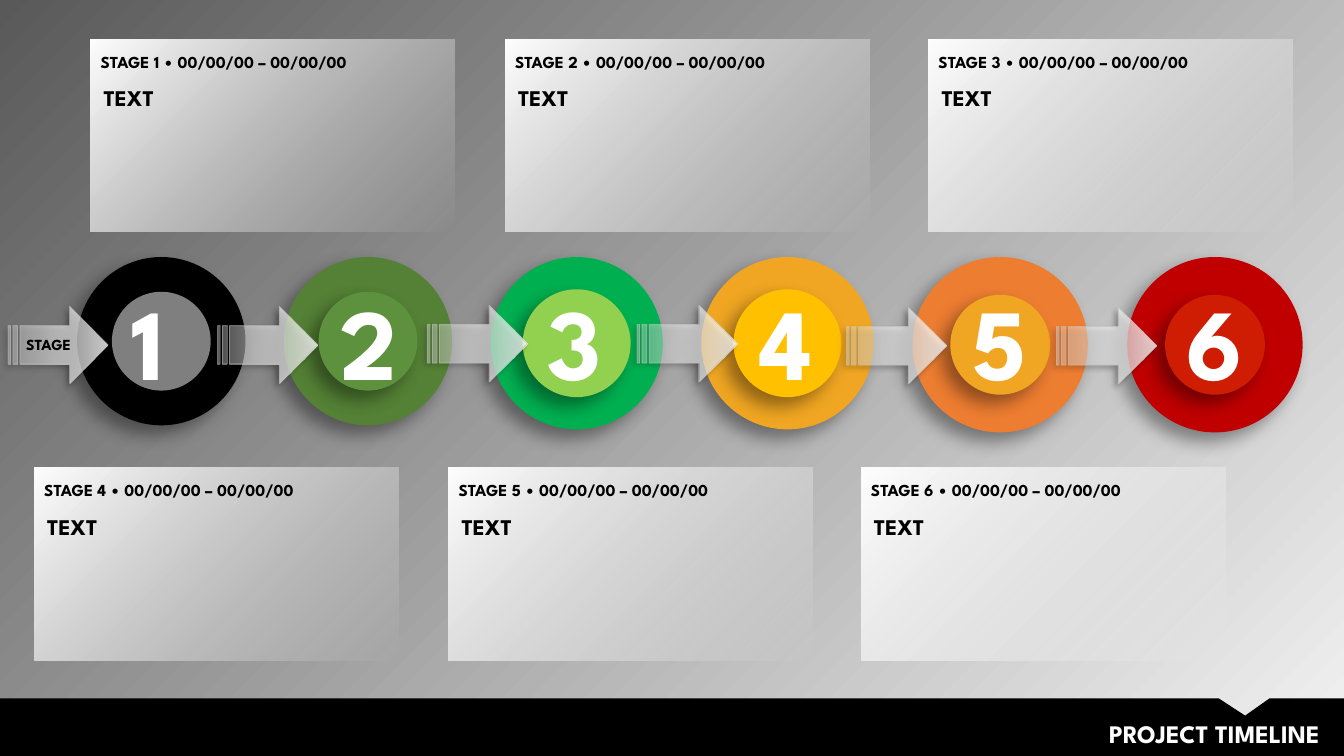
import lxml.etree
import pptx
import pptx.dml.color
import pptx.enum.shapes
import pptx.enum.text
import pptx.oxml.ns
import pptx.util

RGB = pptx.dml.color.RGBColor
Inches = pptx.util.Inches
SHAPE = pptx.enum.shapes.MSO_SHAPE
ALIGN = pptx.enum.text.PP_ALIGN
qn = pptx.oxml.ns.qn

# Content
TITLE = "PROJECT TIMELINE"
ARROW_LABEL = "STAGE"
CARD_BODY = "TEXT"
CARD_DATES = "00/00/00 – 00/00/00"

BLACK = RGB(0x00, 0x00, 0x00)
WHITE = RGB(0xFF, 0xFF, 0xFF)
PALE = RGB(0xF2, 0xF2, 0xF2)
SILVER = RGB(0xBF, 0xBF, 0xBF)
GREY = RGB(0x7F, 0x7F, 0x7F)
CHARCOAL = RGB(0x59, 0x59, 0x59)
MOSS = RGB(0x54, 0x81, 0x35)
FERN = RGB(0x5E, 0x91, 0x3E)
GREEN = RGB(0x00, 0xB0, 0x50)
LIME = RGB(0x92, 0xD0, 0x50)
AMBER = RGB(0xF0, 0xA6, 0x22)
YELLOW = RGB(0xFF, 0xC0, 0x00)
ORANGE = RGB(0xED, 0x7D, 0x31)
CRIMSON = RGB(0xC0, 0x00, 0x00)
RED = RGB(0xCE, 0x1D, 0x02)

# Centre, ring diameter, disc diameter, ring and disc colours, number left, arrow top
STAGES = [
    (1.6, 1.67, 0.98, BLACK, GREY, 1.21, 3.04),
    (3.65, 1.67, 0.98, MOSS, FERN, 3.28, 3.04),
    (5.72, 1.71, 1.07, GREEN, LIME, 5.33, 3.03),
    (7.81, 1.71, 1.07, AMBER, YELLOW, 7.43, 3.03),
    (9.92, 1.74, 0.99, ORANGE, AMBER, 9.55, 3.05),
    (12.05, 1.74, 0.99, CRIMSON, RED, 11.67, 3.05),
]
CARD_ROWS = [(0.39, (0.9, 5.01, 9.21)), (4.64, (0.34, 4.45, 8.54))]

# Layout, in inches
FONT = "League Spartan"
WIDTH, HEIGHT = 13.33, 7.5
CARD_WIDTH, CARD_HEIGHT = 3.61, 1.91
RING_TOP = 2.55
ARROW_LEFT, ARROW_STEP = 0.08, 2.08
ARROW_WIDTH, ARROW_HEIGHT = 0.99, 0.76
BAR_TOP = 6.93
BAR_OUTLINE = [(0, BAR_TOP), (12.09, BAR_TOP), (12.35, 7.1), (12.59, BAR_TOP),
               (WIDTH, BAR_TOP), (WIDTH, HEIGHT), (0, HEIGHT)]
UNITS_PER_INCH = 100


def set_alpha(color_element, percent):
    alpha = lxml.etree.SubElement(color_element, qn("a:alpha"))
    alpha.set("val", str(percent * 1000))


def set_gradient(fill, element, stops, angle):
    """Fill with two (colour, opacity) stops; angle is counter-clockwise."""
    fill.gradient()
    fill.gradient_angle = angle
    for stop, (color, _) in zip(fill.gradient_stops, stops):
        stop.color.rgb = color
    for stop_element, (_, opacity) in zip(element.iter(qn("a:gs")), stops):
        if opacity < 100:
            set_alpha(stop_element[0], opacity)


def add_shadow(shape, blur, distance):
    effects = shape.element.spPr.find(qn("a:effectLst"))
    shadow = lxml.etree.SubElement(effects, qn("a:outerShdw"))
    for name, value in (("blurRad", pptx.util.Pt(blur)), ("dist", pptx.util.Pt(distance)),
                        ("dir", 135 * 60000), ("algn", "tr"), ("rotWithShape", 0)):
        shadow.set(name, str(value))
    color = lxml.etree.SubElement(shadow, qn("a:srgbClr"))
    color.set("val", str(BLACK))
    set_alpha(color, 40)


def add_plain_shape(slide, kind, left, top, width, height):
    shape = slide.shapes.add_shape(kind, Inches(left), Inches(top), Inches(width), Inches(height))
    shape.shadow.inherit = False
    shape.line.fill.background()
    return shape


def add_circle(slide, center_x, center_y, diameter, color):
    circle = add_plain_shape(slide, SHAPE.OVAL, center_x - diameter / 2,
                             center_y - diameter / 2, diameter, diameter)
    circle.fill.solid()
    circle.fill.fore_color.rgb = color
    add_shadow(circle, 13, 9)


def add_arrow(slide, left, top):
    arrow = add_plain_shape(slide, SHAPE.STRIPED_RIGHT_ARROW, left, top, ARROW_WIDTH, ARROW_HEIGHT)
    set_gradient(arrow.fill, arrow.element, [(WHITE, 30), (WHITE, 80)], 0)
    arrow.line.color.rgb = SILVER
    arrow.line.width = pptx.util.Pt(0.75)
    set_alpha(arrow.element.spPr.find(qn("a:ln")).find(".//" + qn("a:srgbClr")), 50)
    add_shadow(arrow, 4, 3)


def add_bar(slide):
    points = [(x * UNITS_PER_INCH, y * UNITS_PER_INCH) for x, y in BAR_OUTLINE]
    builder = slide.shapes.build_freeform(*points[0], scale=Inches(1) / UNITS_PER_INCH)
    builder.add_line_segments(points[1:])
    bar = builder.convert_to_shape()
    bar.shadow.inherit = False
    bar.fill.solid()
    bar.fill.fore_color.rgb = BLACK
    bar.line.fill.background()


def write_text(slide, text, left, top, width, height, size, color=BLACK,
               align=ALIGN.LEFT, shape=None):
    if shape is None:
        shape = slide.shapes.add_textbox(0, 0, 0, 0)
    shape.left, shape.top = Inches(left), Inches(top)
    shape.width, shape.height = Inches(width), Inches(height)
    frame = shape.text_frame
    frame.text = text
    frame.word_wrap = True
    frame.auto_size = pptx.enum.text.MSO_AUTO_SIZE.SHAPE_TO_FIT_TEXT
    frame.vertical_anchor = pptx.enum.text.MSO_ANCHOR.TOP
    paragraph = frame.paragraphs[0]
    paragraph.alignment = align
    font = paragraph.runs[0].font
    font.name, font.size, font.bold = FONT, pptx.util.Pt(size), True
    font.color.rgb = color


def add_card(slide, number, left, top):
    card = add_plain_shape(slide, SHAPE.ROUNDED_RECTANGLE, left, top, CARD_WIDTH, CARD_HEIGHT)
    card.adjustments[0] = 0
    set_gradient(card.fill, card.element, [(PALE, 0), (WHITE, 100)], 135)
    write_text(slide, f"STAGE {number} • {CARD_DATES}", left, top + 0.07, 3.63, 0.3, 12)
    write_text(slide, CARD_BODY, left + 0.03, top + 0.4, 3.56, 0.37, 16)


def main():
    presentation = pptx.Presentation()
    presentation.slide_width, presentation.slide_height = Inches(WIDTH), Inches(HEIGHT)
    slide = presentation.slides.add_slide(presentation.slide_layouts[5])
    set_gradient(slide.background.fill, slide.element, [(PALE, 40), (CHARCOAL, 100)], 135)

    # Notched footer bar, with the title brought in front of it
    add_bar(slide)
    title = slide.shapes.title
    title.element.getparent().append(title.element)
    write_text(slide, TITLE, 6.41, 7.08, 6.78, 0.4, 18, WHITE, ALIGN.RIGHT, title)

    # Cards in two rows
    number = 0
    for top, lefts in CARD_ROWS:
        for left in lefts:
            number += 1
            add_card(slide, number, left, top)

    # Timeline
    for index, (center, ring, disc, ring_color, disc_color, number_left, arrow_top) in enumerate(STAGES):
        middle = RING_TOP + ring / 2
        add_circle(slide, center, middle, ring, ring_color)
        add_circle(slide, center, middle, disc, disc_color)
        add_arrow(slide, ARROW_LEFT + index * ARROW_STEP, arrow_top)
        write_text(slide, str(index + 1), number_left, 2.73, 0.92, 1.31, 72, WHITE)
    write_text(slide, ARROW_LABEL, 0.16, 3.28, 0.79, 0.29, 11)

    presentation.save("out.pptx")


if __name__ == "__main__":
    main()
